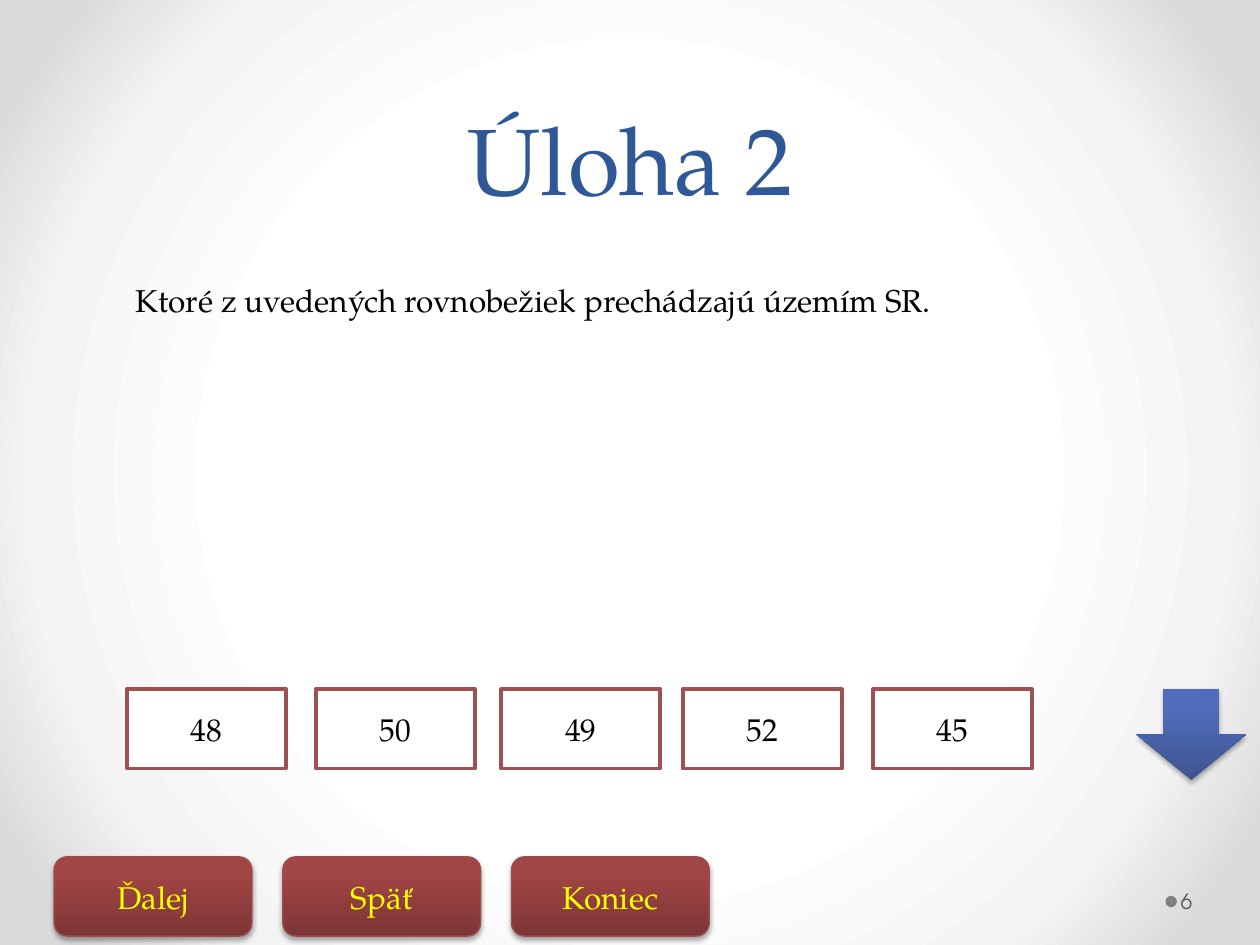
from lxml.etree import SubElement
from pptx import Presentation
from pptx.dml.color import RGBColor
from pptx.enum.shapes import MSO_SHAPE
from pptx.enum.text import MSO_ANCHOR, PP_ALIGN
from pptx.oxml.ns import qn
from pptx.util import Inches, Pt

SLIDE_WIDTH, SLIDE_HEIGHT = 10, 7.5
SERIF, SANS = "TeX Gyre Pagella", "TeX Gyre Adventor"

BLACK = RGBColor(0x00, 0x00, 0x00)
WHITE = RGBColor(0xFF, 0xFF, 0xFF)
YELLOW = RGBColor(0xFF, 0xFF, 0x00)
TITLE_BLUE = RGBColor(0x2F, 0x58, 0x97)
ANSWER_RED = RGBColor(0x9C, 0x52, 0x52)
BUTTON_EDGE = RGBColor(0x9A, 0x4E, 0x4E)
DOT_GRAY = RGBColor(0x80, 0x80, 0x80)
NUMBER_GRAY = RGBColor(0x59, 0x59, 0x59)
BUTTON_STOPS = [
    (0, RGBColor(0x7D, 0x35, 0x35)),
    (80, RGBColor(0xA2, 0x45, 0x45)),
    (100, RGBColor(0xA4, 0x43, 0x43)),
]
ARROW_STOPS = [
    (0, RGBColor(0x3E, 0x54, 0x90)),
    (80, RGBColor(0x51, 0x6D, 0xBB)),
    (100, RGBColor(0x4F, 0x6C, 0xBE)),
]
PAGE_STOPS = [
    (50, WHITE),
    (76, RGBColor(0xF4, 0xF4, 0xF4)),
    (92, RGBColor(0xDA, 0xDA, 0xDA)),
]

ANSWERS = {"48": 1.01, "50": 2.51, "49": 3.98, "52": 5.42, "45": 6.93}
ANSWER_TOP, ANSWER_WIDTH = 5.47, 1.26
BUTTONS = ["Ďalej", "Späť", "Koniec"]
BUTTON_LEFT, BUTTON_TOP, BUTTON_WIDTH, BUTTON_STEP = 0.43, 6.8, 1.57, 1.815
BOX_HEIGHT = 0.63


def set_gradient(fill, owner, stops, radial=False):
    fill.gradient()
    gradient = owner.find(".//" + qn("a:gradFill"))
    for child in list(gradient):
        gradient.remove(child)
    stop_list = SubElement(gradient, qn("a:gsLst"))
    for position, color in stops:
        stop = SubElement(stop_list, qn("a:gs"), pos=str(position * 1000))
        SubElement(stop, qn("a:srgbClr"), val=str(color))
    if radial:
        shade = SubElement(gradient, qn("a:path"), path="circle")
        SubElement(shade, qn("a:fillToRect"), l="50000", t="50000", r="50000", b="50000")
    else:
        SubElement(gradient, qn("a:lin"), ang="16200000", scaled="0")


def add_shadow(shape):
    effects = shape.element.spPr.find(qn("a:effectLst"))
    shadow = SubElement(
        effects, qn("a:outerShdw"), blurRad=str(Pt(3.1)), dist=str(Pt(1.8)),
        dir="5400000", rotWithShape="0",
    )
    color = SubElement(shadow, qn("a:srgbClr"), val=str(BLACK))
    SubElement(color, qn("a:alpha"), val="35000")


def write_text(box, text, size, color, font=SERIF, align=PP_ALIGN.LEFT, anchor=MSO_ANCHOR.MIDDLE):
    frame = box.text_frame
    frame.text = text
    frame.word_wrap = True
    frame.vertical_anchor = anchor
    para = frame.paragraphs[0]
    para.alignment = align
    span = para.runs[0]
    span.font.size = Pt(size)
    span.font.name = font
    span.font.color.rgb = color
    return para


def add_plain_shape(page, kind, left, top, width, height):
    shape = page.shapes.add_shape(kind, Inches(left), Inches(top), Inches(width), Inches(height))
    shape.shadow.inherit = False
    shape.line.fill.background()
    return shape


def set_line(shape, color, width):
    shape.line.color.rgb = color
    shape.line.width = Pt(width)


def add_title(page, text):
    title = page.shapes.title
    title.left, title.top = Inches(SLIDE_WIDTH * 0.05), 0
    title.width, title.height = Inches(SLIDE_WIDTH * 0.9), Inches(1.75)
    para = write_text(title, text, 54, TITLE_BLUE, align=PP_ALIGN.CENTER, anchor=MSO_ANCHOR.BOTTOM)
    para.line_spacing = Pt(58)


def add_label(page, text, left, top, width, height, size, color, **style):
    box = page.shapes.add_textbox(Inches(left), Inches(top), Inches(width), Inches(height))
    write_text(box, text, size, color, **style)
    return box


def add_answer(page, text, left):
    box = add_plain_shape(page, MSO_SHAPE.RECTANGLE, left, ANSWER_TOP, ANSWER_WIDTH, BOX_HEIGHT)
    box.fill.solid()
    box.fill.fore_color.rgb = WHITE
    set_line(box, ANSWER_RED, 2.25)
    write_text(box, text, 18, BLACK, align=PP_ALIGN.CENTER)


def add_button(page, text, column):
    left = BUTTON_LEFT + column * BUTTON_STEP
    button = add_plain_shape(
        page, MSO_SHAPE.ROUNDED_RECTANGLE, left, BUTTON_TOP, BUTTON_WIDTH, BOX_HEIGHT
    )
    set_gradient(button.fill, button.element, BUTTON_STOPS)
    set_line(button, BUTTON_EDGE, 0.75)
    add_shadow(button)
    write_text(button, text, 18, YELLOW, align=PP_ALIGN.CENTER)


def add_down_arrow(page):
    arrow = add_plain_shape(page, MSO_SHAPE.DOWN_ARROW, 9.02, ANSWER_TOP, 0.87, 0.72)
    set_gradient(arrow.fill, arrow.element, ARROW_STOPS)
    add_shadow(arrow)


def add_page_number(page, text):
    dot = add_plain_shape(page, MSO_SHAPE.OVAL, 9.25, 7.11, 0.09, 0.09)
    dot.fill.solid()
    dot.fill.fore_color.rgb = DOT_GRAY
    number = add_label(page, text, 9.34, 6.95, 0.61, 0.4, 12, NUMBER_GRAY, font=SANS)
    number.text_frame.margin_left = Inches(0.03)
    number.text_frame.margin_right = Inches(0.05)


def main():
    deck = Presentation()
    deck.slide_width, deck.slide_height = Inches(SLIDE_WIDTH), Inches(SLIDE_HEIGHT)
    page = deck.slides.add_slide(deck.slide_layouts[5])
    set_gradient(page.background.fill, page.element, PAGE_STOPS, radial=True)
    add_title(page, "Úloha 2")
    add_label(
        page, "Ktoré z uvedených rovnobežiek prechádzajú územím SR.",
        0.98, 2.18, 8.74, 0.71, 18, BLACK, anchor=MSO_ANCHOR.TOP,
    )
    for text, left in ANSWERS.items():
        add_answer(page, text, left)
    add_down_arrow(page)
    for column, text in enumerate(BUTTONS):
        add_button(page, text, column)
    add_page_number(page, "6")
    deck.save("out.pptx")


if __name__ == "__main__":
    main()
